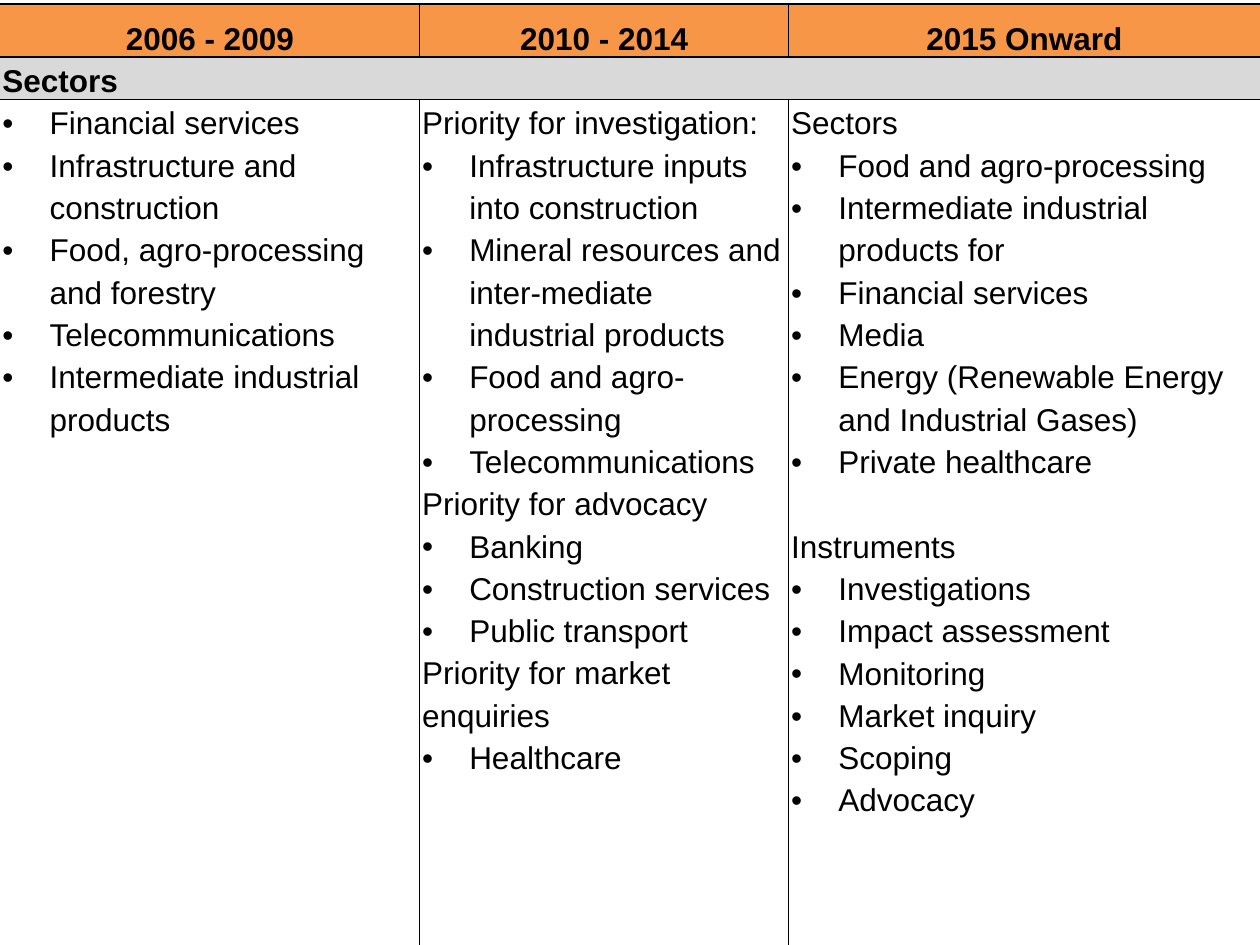
from lxml import etree
from pptx import Presentation
from pptx.dml.color import RGBColor
from pptx.enum.text import MSO_ANCHOR, PP_ALIGN
from pptx.oxml.ns import qn
from pptx.util import Cm, Pt

CENTER, LEFT, TOP = PP_ALIGN.CENTER, PP_ALIGN.LEFT, MSO_ANCHOR.TOP
COLORS = {"text": "000000", "border": "000000", "header": "F79646", "band": "D9D9D9"}
FONT_NAME, FONT_SIZE = "Arial", Pt(18)
BLANK_LINE = Pt(24.2)

BAND_TITLE = "Sectors"
# Each period holds groups of (heading, bullets, space before the heading).
PERIODS = [
    ("2006 - 2009", [
        (None, ["Financial services", "Infrastructure and construction",
                "Food, agro-processing and forestry", "Telecommunications",
                "Intermediate industrial products"], 0),
    ]),
    ("2010 - 2014", [
        ("Priority for investigation:", [
            "Infrastructure inputs into construction",
            "Mineral resources and inter-mediate industrial products",
            "Food and agro-processing", "Telecommunications"], 0),
        ("Priority for advocacy",
         ["Banking", "Construction services", "Public transport"], 0),
        ("Priority for market enquiries", ["Healthcare"], 0),
    ]),
    ("2015 Onward", [
        ("Sectors", [
            "Food and agro-processing", "Intermediate industrial products for",
            "Financial services", "Media",
            "Energy (Renewable Energy and Industrial Gases)",
            "Private healthcare"], 0),
        ("Instruments", ["Investigations", "Impact assessment", "Monitoring",
                         "Market inquiry", "Scoping", "Advocacy"], BLANK_LINE),
    ]),
]
COLUMN_WIDTHS = [Cm(8.46), Cm(7.44), Cm(9.5)]
ROW_HEIGHTS = [Cm(0.66), Cm(0.56), Cm(17.75)]
BULLET_INDENT = Cm(0.95)


def set_borders(cell, sides):
    """Draw the given sides (letters of LRTB) and hide the others."""
    properties = cell._tc.get_or_add_tcPr()
    for position, side in enumerate("LRTB"):
        line = etree.Element(qn(f"a:ln{side}"), w=str(Pt(1)))
        if side in sides:
            fill = etree.SubElement(line, qn("a:solidFill"))
            etree.SubElement(fill, qn("a:srgbClr"), val=COLORS["border"])
        else:
            etree.SubElement(line, qn("a:noFill"))
        properties.insert(position, line)


def style_cell(cell, sides, color=None):
    cell.margin_left = cell.margin_right = Cm(0.05)
    cell.margin_top = cell.margin_bottom = 0
    cell.vertical_anchor = TOP
    if color:
        cell.fill.solid()
        cell.fill.fore_color.rgb = RGBColor.from_string(COLORS[color])
    else:
        cell.fill.background()
    set_borders(cell, sides)


def add_line(cell, text, bold=False, bullet=False, align=LEFT, spacing=1.2, before=0):
    """Write one paragraph, using the cell's empty first one if it is free."""
    frame = cell.text_frame
    paragraph = frame.paragraphs[0] if not frame.text else frame.add_paragraph()
    paragraph.alignment = align
    paragraph.line_spacing = spacing
    if before:
        paragraph.space_before = before
    if bullet:
        properties = paragraph._p.get_or_add_pPr()
        properties.set("marL", str(BULLET_INDENT))
        properties.set("indent", str(-BULLET_INDENT))
        etree.SubElement(properties, qn("a:buFont"), typeface=FONT_NAME)
        etree.SubElement(properties, qn("a:buChar"), char="•")
    run = paragraph.add_run()
    run.text = text
    run.font.name, run.font.size, run.font.bold = FONT_NAME, FONT_SIZE, bold
    run.font.color.rgb = RGBColor.from_string(COLORS["text"])


def main():
    presentation = Presentation()
    presentation.slide_width, presentation.slide_height = Cm(25.4), Cm(19.05)
    slide = presentation.slides.add_slide(presentation.slide_layouts[6])
    table = slide.shapes.add_table(
        len(ROW_HEIGHTS), len(PERIODS), 0, Cm(0.08),
        sum(COLUMN_WIDTHS), sum(ROW_HEIGHTS)).table
    table.first_row = table.horz_banding = False
    for column, width in zip(table.columns, COLUMN_WIDTHS):
        column.width = width
    for row, height in zip(table.rows, ROW_HEIGHTS):
        row.height = height

    last = len(PERIODS) - 1
    for index, (period, groups) in enumerate(PERIODS):
        sides = "TB" + ("L" if index > 0 else "") + ("R" if index < last else "")
        header, band, body = (table.cell(row, index) for row in range(3))
        style_cell(header, sides, "header")
        style_cell(band, "TB", "band")
        style_cell(body, sides)
        add_line(header, period, bold=True, align=CENTER, spacing=1.5)
        for heading, bullets, before in groups:
            if heading:
                add_line(body, heading, before=before)
            for text in bullets:
                add_line(body, text, bullet=True)

    table.cell(1, 0).merge(table.cell(1, last))
    add_line(table.cell(1, 0), BAND_TITLE, bold=True)
    presentation.save("out.pptx")


if __name__ == "__main__":
    main()
